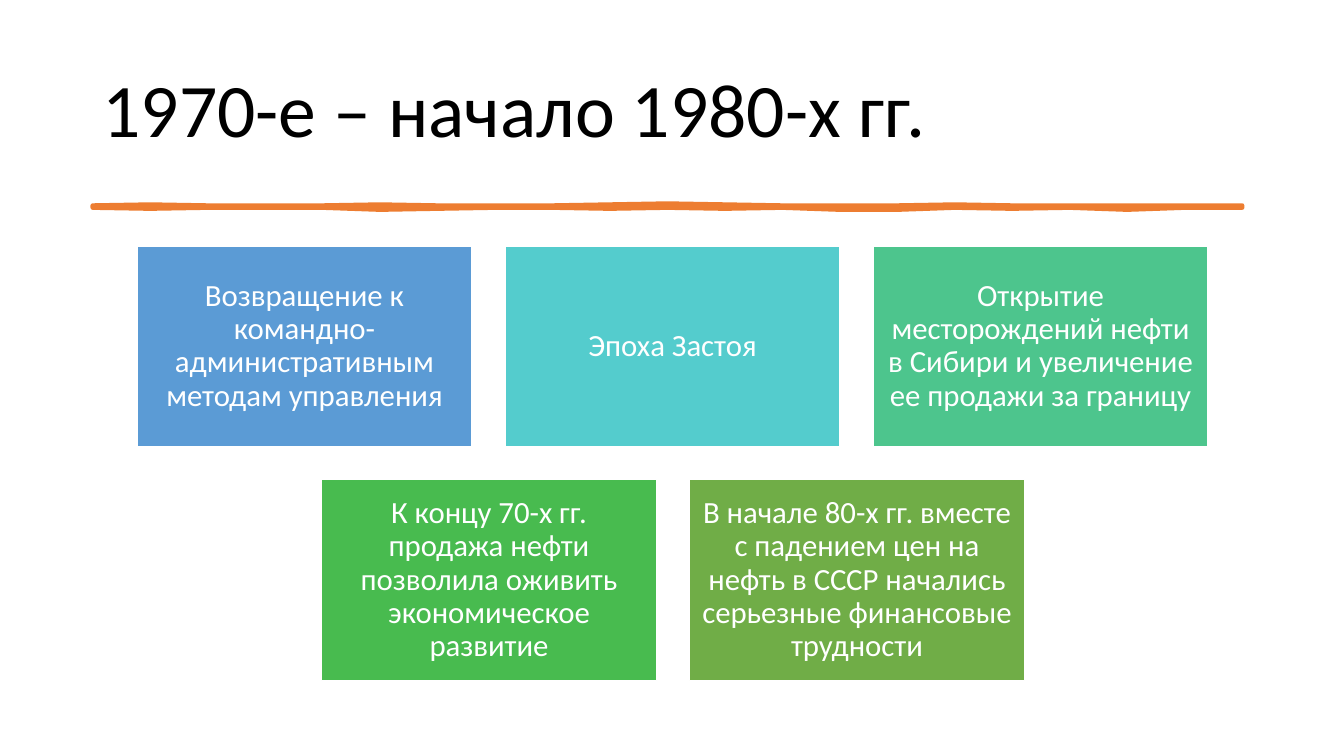
from lxml import etree
from pptx import Presentation
from pptx import util as u
from pptx.dml.color import RGBColor
from pptx.enum import shapes, text
from pptx.oxml.ns import qn

PX = 9144
BLACK = RGBColor(0x00, 0x00, 0x00)
WHITE = RGBColor(0xFF, 0xFF, 0xFF)
ORANGE = RGBColor(0xED, 0x7D, 0x31)
BLUE = RGBColor(0x5B, 0x9B, 0xD5)
TURQUOISE = RGBColor(0x54, 0xCC, 0xCD)
MINT = RGBColor(0x4D, 0xC5, 0x8D)
GREEN = RGBColor(0x48, 0xBB, 0x4F)
OLIVE = RGBColor(0x70, 0xAD, 0x47)

CARD_ROWS = [
    [
        ("Возвращение к командно-административным методам управления", BLUE),
        ("Эпоха Застоя", TURQUOISE),
        ("Открытие месторождений нефти в Сибири и увеличение ее продажи за границу", MINT),
    ],
    [
        ("К концу 70-х гг. продажа нефти позволила оживить экономическое развитие", GREEN),
        ("В начале 80-х гг. вместе с падением цен на нефть в СССР начались серьезные "
         "финансовые трудности", OLIVE),
    ],
]
CARD_WIDTH, CARD_HEIGHT = 332, 199
COLUMN_STEP, ROW_STEP = 365, 232
CARDS_CENTER, CARDS_TOP = 667, 244

STROKE_LEFT, STROKE_STEP = 92, 57
STROKE_TOPS = [204, 203, 204, 204, 204, 203, 204, 204, 204, 203, 202,
               203, 204, 204, 204, 203, 204, 204, 204, 204, 204]
STROKE_BOTTOMS = [206, 207, 206, 206, 206, 208, 207, 206, 206, 207, 206,
                  207, 206, 208, 208, 206, 207, 206, 208, 206, 206]


def write(shape, content, size, color, align=text.PP_ALIGN.LEFT, inset=10, font="Calibri"):
    frame = shape.text_frame
    frame.word_wrap = True
    frame.vertical_anchor = text.MSO_ANCHOR.MIDDLE
    frame.margin_left = frame.margin_right = inset * PX
    frame.margin_top = frame.margin_bottom = min(inset, 9) * PX
    paragraph = frame.paragraphs[0]
    paragraph.alignment = align
    paragraph.line_spacing = 0.9
    run = paragraph.add_run()
    run.text = content
    run.font.name = font
    run.font.size = u.Pt(size)
    run.font.color.rgb = color


class SlideBuilder:
    """Draws styled elements, measured in px, on the current slide."""

    def __init__(self, slide):
        self.slide = slide

    def paint(self, shape, fill, line, width):
        shape.shadow.inherit = False
        shape.fill.solid()
        shape.fill.fore_color.rgb = fill
        shape.line.color.rgb = line
        shape.line.width = u.Pt(width)

    def title(self, content, left, top, width, height):
        box = self.slide.shapes.add_textbox(left * PX, top * PX, width * PX, height * PX)
        write(box, content, size=54, color=BLACK)

    def card(self, content, fill, left, top):
        card = self.slide.shapes.add_shape(
            shapes.MSO_SHAPE.RECTANGLE,
            left * PX, top * PX, CARD_WIDTH * PX, CARD_HEIGHT * PX)
        self.paint(card, fill, WHITE, 1)
        write(card, content, size=22, color=WHITE, align=text.PP_ALIGN.CENTER, inset=9)

    def brush_stroke(self, left, step, tops, bottoms):
        upper = [(left + index * step, y) for index, y in enumerate(tops)]
        lower = [(left + index * step, y) for index, y in enumerate(bottoms)]
        builder = self.slide.shapes.build_freeform(*upper[0], scale=PX)
        builder.add_line_segments(upper[1:] + lower[::-1], close=True)
        stroke = builder.convert_to_shape()
        self.paint(stroke, ORANGE, ORANGE, 3.25)
        etree.SubElement(stroke.line._get_or_add_ln(), qn("a:round"))


def main():
    presentation = Presentation()
    presentation.slide_width = u.Inches(13.33)
    presentation.slide_height = u.Inches(7.5)
    builder = SlideBuilder(presentation.slides.add_slide(presentation.slide_layouts[6]))
    builder.title("1970-е – начало 1980-х гг.", 92, 40, 1150, 145)
    builder.brush_stroke(STROKE_LEFT, STROKE_STEP, STROKE_TOPS, STROKE_BOTTOMS)
    for row, cards in enumerate(CARD_ROWS):
        row_width = (len(cards) - 1) * COLUMN_STEP + CARD_WIDTH
        row_left = CARDS_CENTER - row_width // 2
        for column, (content, fill) in enumerate(cards):
            builder.card(content, fill, row_left + column * COLUMN_STEP,
                         CARDS_TOP + row * ROW_STEP)
    presentation.save("out.pptx")


if __name__ == "__main__":
    main()
